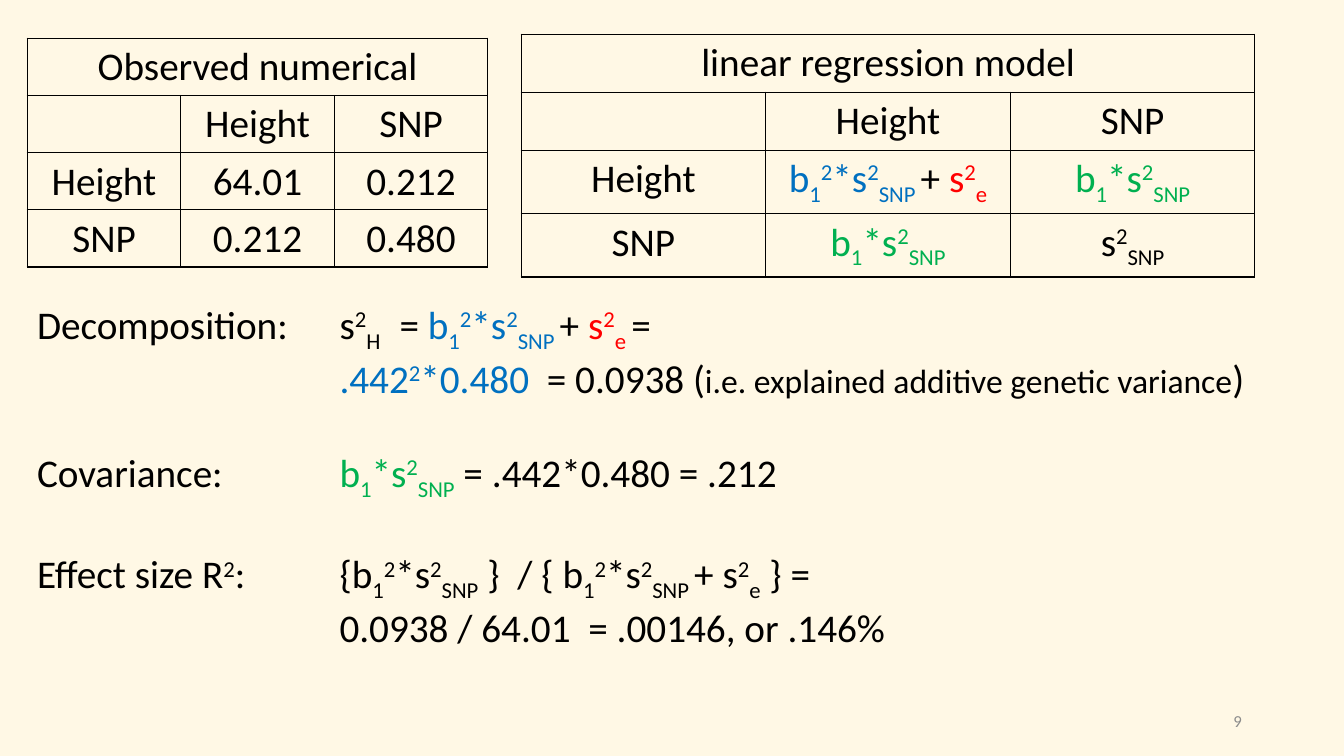
import pptx
import pptx.dml.color
import pptx.enum.text
import pptx.oxml
import pptx.oxml.ns
import pptx.util

RGBColor = pptx.dml.color.RGBColor
CREAM = RGBColor(0xFF, 0xF8, 0xE5)
BLACK = RGBColor(0x00, 0x00, 0x00)
BLUE = RGBColor(0x00, 0x70, 0xC0)
GREEN = RGBColor(0x00, 0xB0, 0x50)
RED = RGBColor(0xFF, 0x00, 0x00)
GRAY = RGBColor(0x8C, 0x8C, 0x8C)

ALIGN = pptx.enum.text.PP_ALIGN
ANCHOR = pptx.enum.text.MSO_ANCHOR
SHIFTS = {"^": "30000", "_": "-25000"}
BORDER = (
    '<a:{side} {ns} w="12700"><a:solidFill><a:srgbClr val="{color}"/>'
    "</a:solidFill></a:{side}>"
)
TAB_LIST = '<a:tabLst {ns}><a:tab pos="{pos}" algn="l"/></a:tabLst>'

VARIANCE = ("s", "^2", "_SNP")
COVARIANCE = ("b", "_1", "*s", "^2", "_SNP")
EXPLAINED = ("b", "_1", "^2", "*s", "^2", "_SNP")
RESIDUAL = ("s", "^2", "_e")


class Deck:
    """Style and current slide; lengths are cells of a 160 by 90 grid."""

    font = "Calibri"
    size = 28
    unit = pptx.util.Inches(1) / 12

    def __init__(self):
        self.presentation = pptx.Presentation()
        self.presentation.slide_width = self.length(160)
        self.presentation.slide_height = self.length(90)
        self.slide = self.presentation.slides.add_slide(
            self.presentation.slide_layouts[6]
        )
        background = self.slide.background.fill
        background.solid()
        background.fore_color.rgb = CREAM

    def length(self, cells):
        return round(cells * self.unit)

    def add_phrases(self, paragraph, phrases, size=None):
        for color, *pieces in phrases:
            for piece in pieces:
                shift = SHIFTS.get(piece[0])
                run = paragraph.add_run()
                run.text = piece[1:] if shift else piece
                run.font.name = self.font
                run.font.size = pptx.util.Pt(size or self.size)
                run.font.color.rgb = color
                if shift:
                    run.font._element.set("baseline", shift)

    def text(self, left, top, width, height, anchor=ANCHOR.TOP):
        box = self.slide.shapes.add_textbox(
            *map(self.length, (left, top, width, height))
        )
        box.text_frame.word_wrap = True
        box.text_frame.vertical_anchor = anchor
        return box.text_frame

    def tab_stop(self, paragraph, cells):
        tabs = TAB_LIST.format(
            ns=pptx.oxml.ns.nsdecls("a"), pos=self.length(cells)
        )
        paragraph._p.get_or_add_pPr().append(pptx.oxml.parse_xml(tabs))

    def outline(self, cell):
        for side in ("lnL", "lnR", "lnT", "lnB"):
            line = BORDER.format(
                side=side, ns=pptx.oxml.ns.nsdecls("a"), color=BLACK
            )
            cell._tc.get_or_add_tcPr().append(pptx.oxml.parse_xml(line))
        cell.fill.background()

    def matrix(self, left, top, width, height, title, values):
        labels = ("Height", "SNP")
        rows = [[[(BLACK, title)], [], []]]
        rows.append([[]] + [[(BLACK, label)] for label in labels])
        rows += [[[(BLACK, label)], *row] for label, row in zip(labels, values)]
        table = self.slide.shapes.add_table(
            len(rows), 3, *map(self.length, (left, top, width, height))
        ).table
        table.first_row = table.horz_banding = False
        for r, row in enumerate(rows):
            for c, phrases in enumerate(row):
                cell = table.cell(r, c)
                self.outline(cell)
                paragraph = cell.text_frame.paragraphs[0]
                paragraph.alignment = ALIGN.CENTER
                self.add_phrases(paragraph, phrases)
        table.cell(0, 0).merge(table.cell(0, 2))


def main():
    deck = Deck()

    deck.matrix(
        62.04, 4.08, 87.36, 27.24, "linear regression model",
        [
            [
                [(BLUE, *EXPLAINED, "_ "), (BLACK, "+ "), (RED, *RESIDUAL)],
                [(GREEN, *COVARIANCE)],
            ],
            [[(GREEN, *COVARIANCE)], [(BLACK, *VARIANCE)]],
        ],
    )

    steps = [
        (0, [
            (BLACK, "Decomposition:\ts", "^2", "_H  ", " = "),
            (BLUE, *EXPLAINED, "_ "),
            (BLACK, "+ "),
            (RED, *RESIDUAL, "_ "),
            (BLACK, "="),
        ]),
        (0, [
            (BLUE, "\t.442", "^2", "*0.480 "),
            (BLACK, " = 0.0938 ("),
        ]),
        (34, [
            (BLACK, "Covariance:\t"),
            (GREEN, *COVARIANCE),
            (BLACK, " = .442*0.480 = .212"),
        ]),
        (34, [
            (BLACK, "Effect size R", "^2", ":\t{", *EXPLAINED, " }  / { ",
             *EXPLAINED, "_ ", "+ ", *RESIDUAL, " } ="),
        ]),
        (0, [(BLACK, "\t0.0938 / 64.01  = .00146, or .146%")]),
    ]
    derivation = deck.text(3.24, 35.16, 156.72, 40.8)
    for index, (gap, phrases) in enumerate(steps):
        step = derivation.add_paragraph() if index else derivation.paragraphs[0]
        step.space_before = pptx.util.Pt(gap)
        deck.tab_stop(step, 36)
        deck.add_phrases(step, phrases)
    explained_step = derivation.paragraphs[1]
    remark = "i.e. explained additive genetic variance"
    deck.add_phrases(explained_step, [(BLACK, remark)], size=24)
    deck.add_phrases(explained_step, [(BLACK, ")")])

    observed = (("64.01", "0.212"), ("0.212", "0.480"))
    deck.matrix(
        3.24, 4.56, 54.84, 27.24, "Observed numerical",
        [[[(BLACK, value)] for value in row] for row in observed],
    )

    page_number = deck.text(113.04, 83.4, 36, 4.8, ANCHOR.MIDDLE).paragraphs[0]
    page_number.alignment = ALIGN.RIGHT
    deck.add_phrases(page_number, [(GRAY, "9")], size=12)

    deck.presentation.save("out.pptx")


if __name__ == "__main__":
    main()
